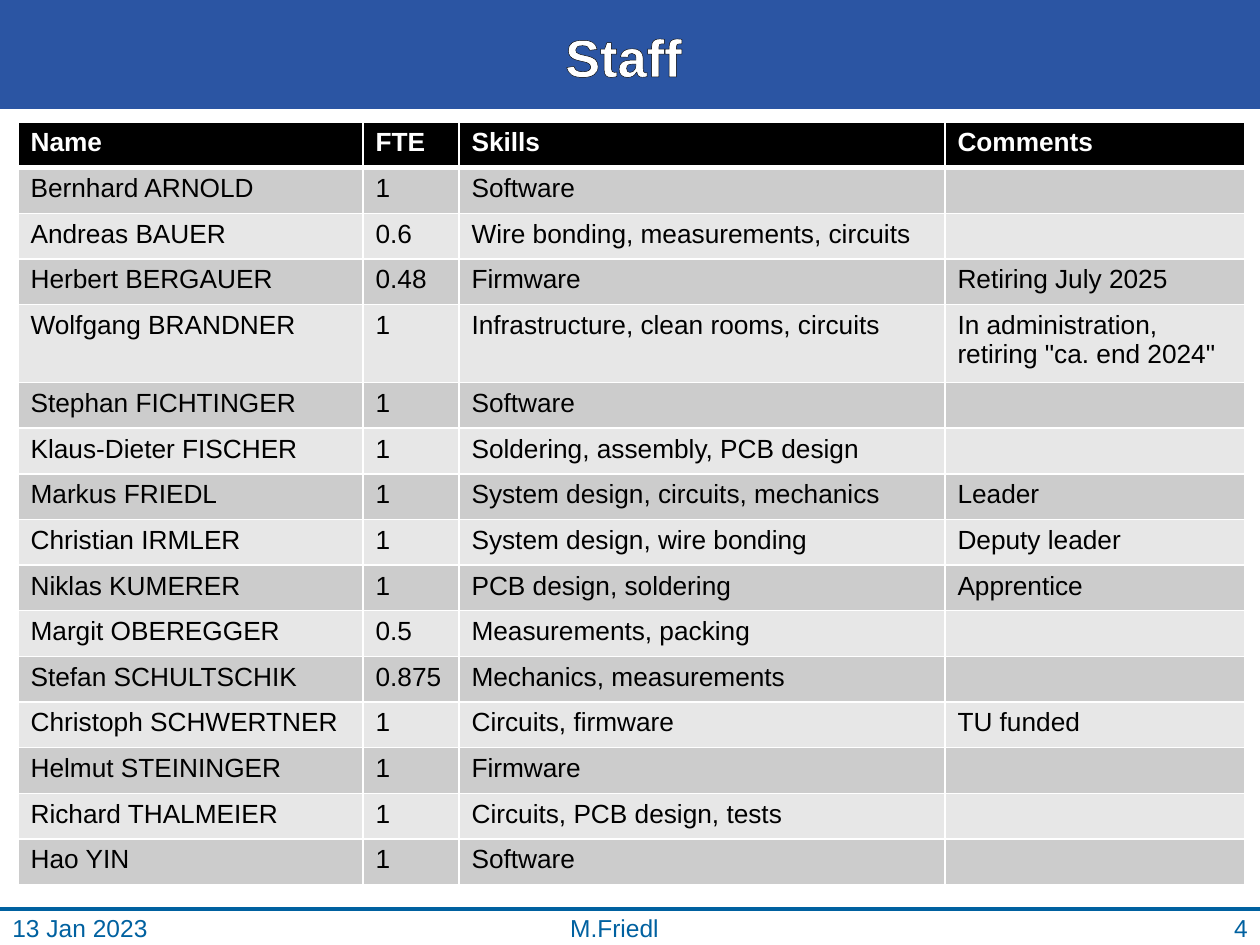
from lxml import etree
from pptx import Presentation
from pptx import util as u
from pptx.dml.color import RGBColor
from pptx.enum import shapes, text
from pptx.oxml.ns import qn

PX = u.Inches(1) // 126
FONT = "Arial"
COLORS = {
    "banner": "2B55A3", "footer": "0061A0", "white": "FFFFFF", "black": "000000",
    "odd_row": "CCCCCC", "even_row": "E7E7E7",
}
HEADER = ("Name", "FTE", "Skills", "Comments")
STAFF = [
    ("Bernhard ARNOLD", "1", "Software", ""),
    ("Andreas BAUER", "0.6", "Wire bonding, measurements, circuits", ""),
    ("Herbert BERGAUER", "0.48", "Firmware", "Retiring July 2025"),
    ("Wolfgang BRANDNER", "1", "Infrastructure, clean rooms, circuits",
     'In administration, retiring "ca. end 2024"'),
    ("Stephan FICHTINGER", "1", "Software", ""),
    ("Klaus-Dieter FISCHER", "1", "Soldering, assembly, PCB design", ""),
    ("Markus FRIEDL", "1", "System design, circuits, mechanics", "Leader"),
    ("Christian IRMLER", "1", "System design, wire bonding", "Deputy leader"),
    ("Niklas KUMERER", "1", "PCB design, soldering", "Apprentice"),
    ("Margit OBEREGGER", "0.5", "Measurements, packing", ""),
    ("Stefan SCHULTSCHIK", "0.875", "Mechanics, measurements", ""),
    ("Christoph SCHWERTNER", "1", "Circuits, firmware", "TU funded"),
    ("Helmut STEININGER", "1", "Firmware", ""),
    ("Richard THALMEIER", "1", "Circuits, PCB design, tests", ""),
    ("Hao YIN", "1", "Software", ""),
]
COLUMN_WIDTHS = (345, 96, 486, 300)
TABLE_HEIGHT = 763
TWO_LINE_ROW, TWO_LINE_HEIGHT = 4, 78


def rgb(name):
    return RGBColor.from_string(COLORS[name])


def px(*lengths):
    return [length * PX for length in lengths]


def add_line_fill(parent, name):
    fill = etree.SubElement(parent, qn("a:solidFill"))
    etree.SubElement(fill, qn("a:srgbClr"), val=COLORS[name])


def add_run(paragraph, content, size, color, bold=False):
    run = paragraph.add_run()
    run.text = content
    run.font.name = FONT
    run.font.size = u.Pt(size)
    run.font.bold = bold
    run.font.color.rgb = rgb(color)
    return run


def add_banner(slide):
    shape = slide.shapes.add_shape(shapes.MSO_SHAPE.RECTANGLE, *px(0, 0, 1260, 109))
    shape.shadow.inherit = False
    shape.fill.solid()
    shape.fill.fore_color.rgb = rgb("banner")
    shape.line.fill.background()


def add_footer_rule(slide):
    rule = slide.shapes.add_connector(
        shapes.MSO_CONNECTOR.STRAIGHT, *px(0, 909, 1260, 909))
    rule.line.color.rgb = rgb("footer")
    rule.line.width = u.Pt(2)
    etree.SubElement(rule._element.spPr, qn("a:effectLst"))


def add_label(slide, box, content, size, color, align, bold=False):
    frame = slide.shapes.add_textbox(*px(*box)).text_frame
    frame.word_wrap = True
    frame.vertical_anchor = text.MSO_ANCHOR.MIDDLE
    paragraph = frame.paragraphs[0]
    paragraph.alignment = align
    return add_run(paragraph, content, size, color, bold)


def outline_text(run, color, points):
    properties = run.font._element
    outline = etree.Element(qn("a:ln"), w=str(u.Pt(points)))
    add_line_fill(outline, color)
    properties.insert(0, outline)


def set_borders(cell, top, bottom):
    """Draw white cell borders; top and bottom are widths in points."""
    properties = cell._tc.get_or_add_tcPr()
    widths = {"lnL": 1, "lnR": 1, "lnT": top, "lnB": bottom}
    for index, (side, points) in enumerate(widths.items()):
        border = etree.Element(qn(f"a:{side}"), w=str(u.Pt(points)))
        add_line_fill(border, "white")
        properties.insert(index, border)


def fill_cell(cell, content, row):
    is_header = row == 0
    cell.fill.solid()
    cell.fill.fore_color.rgb = rgb(
        "black" if is_header else "odd_row" if row % 2 else "even_row")
    set_borders(cell, 3 if row == 1 else 1, 3 if is_header else 1)
    paragraph = cell.text_frame.paragraphs[0]
    if content:
        add_run(paragraph, content, 15, "white" if is_header else "black", is_header)
    else:
        # Keeps an empty cell from stretching its row
        etree.SubElement(paragraph._p, qn("a:endParaRPr"), sz="1500")


def add_staff_table(slide):
    rows = [HEADER, *STAFF]
    box = px(18, 122, sum(COLUMN_WIDTHS), TABLE_HEIGHT)
    table = slide.shapes.add_table(len(rows), len(HEADER), *box).table
    for column, width in zip(table.columns, COLUMN_WIDTHS):
        column.width = width * PX
    row_height = (TABLE_HEIGHT - TWO_LINE_HEIGHT) * PX // (len(rows) - 1)
    for index, values in enumerate(rows):
        table.rows[index].height = (
            TWO_LINE_HEIGHT * PX if index == TWO_LINE_ROW else row_height)
        for column, content in enumerate(values):
            fill_cell(table.cell(index, column), content, index)


def main():
    presentation = Presentation()
    presentation.slide_width, presentation.slide_height = px(1260, 945)
    slide = presentation.slides.add_slide(presentation.slide_layouts[6])
    align = text.PP_ALIGN

    add_banner(slide)
    add_footer_rule(slide)
    for left, width, content, side in (
        (1115, 145, "4", align.RIGHT),
        (282, 665, "M.Friedl", align.CENTER),
        (0, 253, "13 Jan 2023", align.LEFT),
    ):
        add_label(slide, (left, 910, width, 35), content, 14, "footer", side)
    title = add_label(slide, (250, 6, 747, 100), "Staff", 30, "white",
                      align.CENTER, bold=True)
    outline_text(title, "black", 0.75)
    add_staff_table(slide)
    presentation.save("out.pptx")


if __name__ == "__main__":
    main()
